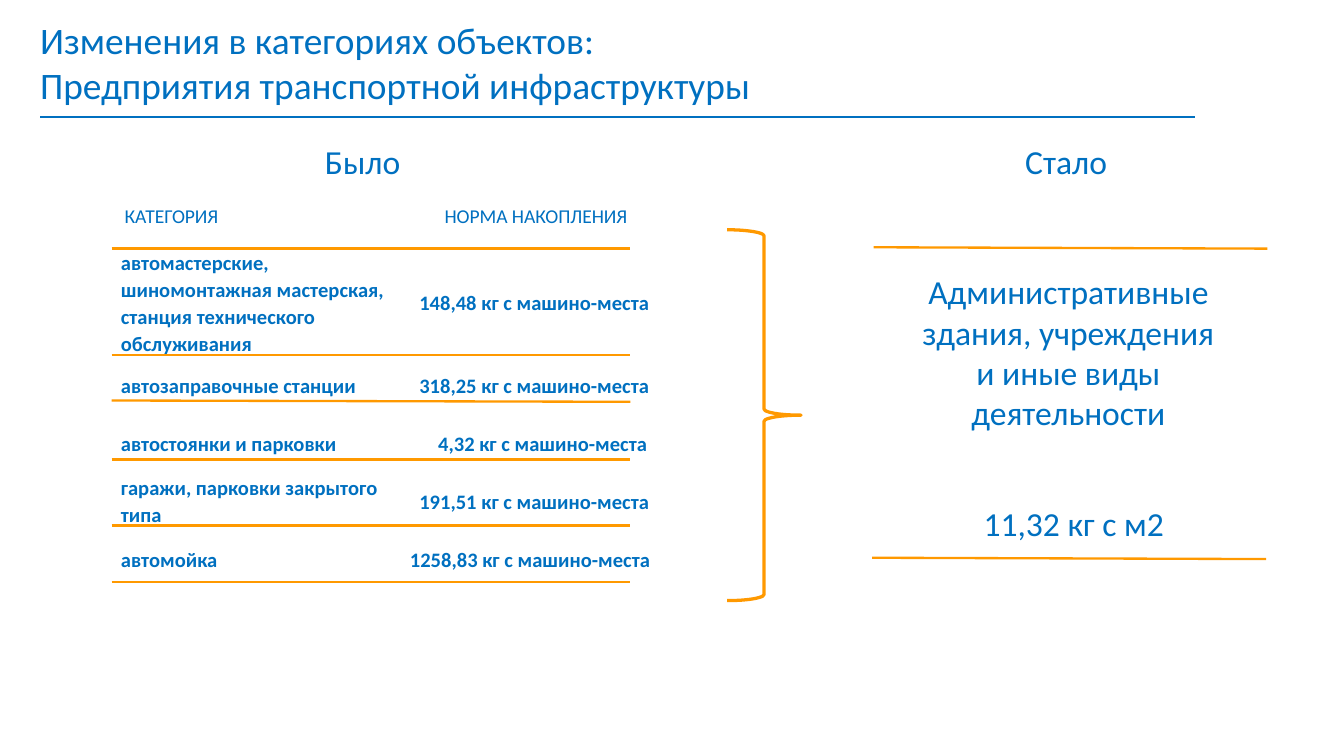
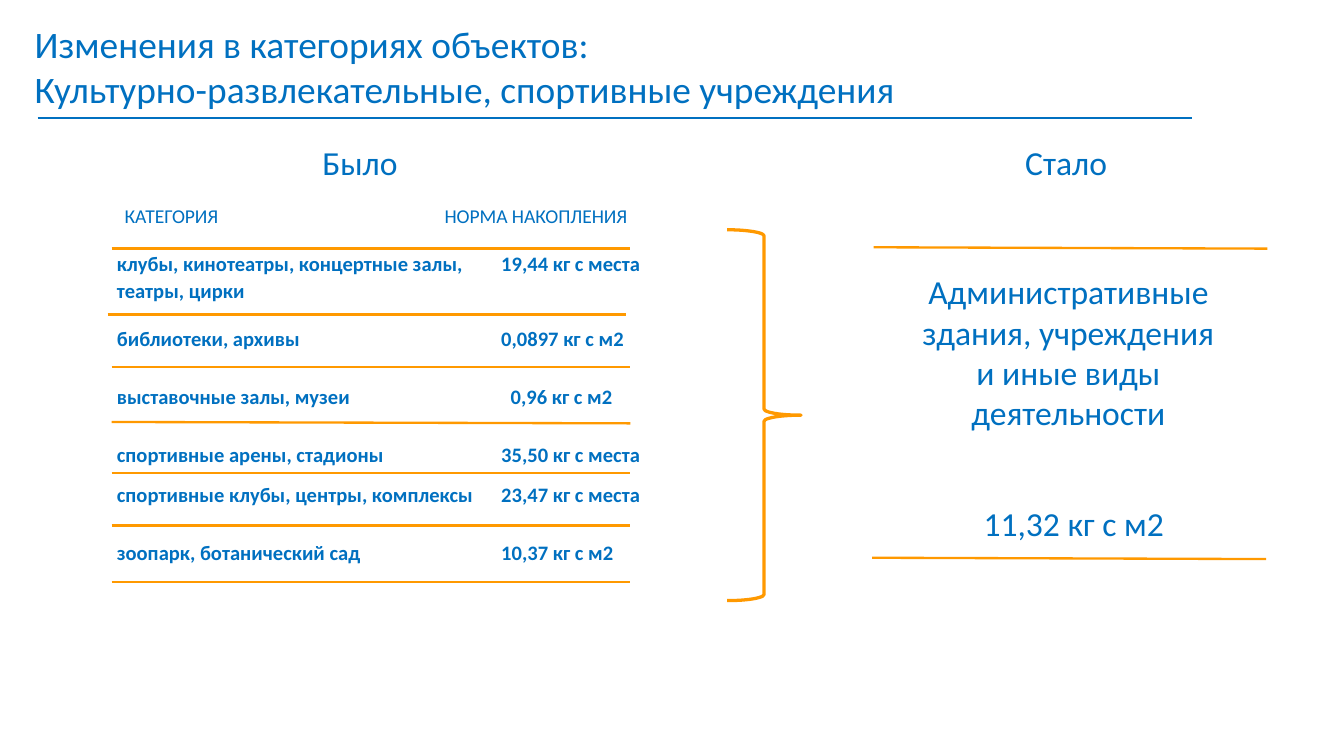
from lxml.etree import SubElement
from pptx import Presentation
from pptx.dml.color import RGBColor
from pptx.enum.shapes import MSO_CONNECTOR, MSO_SHAPE
from pptx.enum.text import MSO_ANCHOR, MSO_AUTO_SIZE, PP_ALIGN
from pptx.oxml.ns import qn
from pptx.util import Inches, Pt

SLIDE_WIDTH = 10
SLIDE_HEIGHT = SLIDE_WIDTH * 9 / 16
COLORS = {"text": "0070C0", "accent": "FF9900", "border": "FFFFFF"}
FONT = "Calibri"
TITLE_LEAD = "Изменения в категориях объектов:"
NEW_CATEGORY = "Административные здания, учреждения и иные виды деятельности"
NEW_NORM = "11,32 кг с м2"
RULE_LEFT, RULE_RIGHT = 0.83, 4.69
SHARED_RULES = [
    (RULE_LEFT, 1.85, RULE_RIGHT, 1.85),
    (RULE_LEFT, 3.91, RULE_RIGHT, 3.91),
    (RULE_LEFT, 4.33, RULE_RIGHT, 4.33),
    (6.5, 1.84, 9.43, 1.85),
    (6.49, 4.15, 9.42, 4.16),
]

TOPICS = [
    {
        "title": "Предприятия транспортной инфраструктуры",
        "title_box": (0.2, 0.08, 8.59, 0.77),
        "title_rule": (0.3, 0.87, 8.89, 0.87),
        "before_box": (2.32, 1, 0.87, 0.4),
        "after_box": (7.53, 1, 0.87, 0.4),
        "norms_box": (0.83, 1.85, 4.3, 2.49),
        "columns": (2.15, 2.15),
        "anchor": MSO_ANCHOR.MIDDLE,
        "space_after": 8,
        "norms": [
            ("автомастерские, шиномонтажная мастерская, станция технического обслуживания",
             "148,48 кг с машино-места", 0.64, 0.07),
            ("автозаправочные станции", "318,25 кг с машино-места", 0.43, 0.07),
            ("автостоянки и парковки", "4,32 кг с машино-места", 0.43, 0.21),
            ("гаражи, парковки закрытого типа", "191,51 кг с машино-места", 0.43, 0.07),
            ("автомойка", "1258,83 кг с машино-места", 0.43, 0),
        ],
        "rules": [
            (RULE_LEFT, 2.64, RULE_RIGHT, 2.64),
            (RULE_LEFT, 2.98, RULE_RIGHT, 2.99),
            (RULE_LEFT, 3.42, RULE_RIGHT, 3.42),
        ],
    },
    {
        "title": "Культурно-развлекательные, спортивные учреждения",
        "title_box": (0.16, 0.11, 8.63, 0.77),
        "title_rule": (0.28, 0.88, 8.87, 0.88),
        "before_box": (2.3, 1.01, 0.87, 0.4),
        "after_box": (7.53, 1.01, 0.87, 0.4),
        "norms_box": (0.8, 1.86, 4.51, 2.56),
        "columns": (2.86, 1.65),
        "anchor": MSO_ANCHOR.TOP,
        "space_after": 0,
        "norms": [
            ("клубы, кинотеатры, концертные залы, театры, цирки", "19,44 кг с места", 0.56, 0),
            ("библиотеки, архивы", "0,0897 кг с м2", 0.43, 0),
            ("выставочные залы, музеи", "0,96 кг с м2", 0.43, 0.07),
            ("спортивные арены, стадионы", "35,50 кг с места", 0.3, 0),
            ("спортивные клубы, центры, комплексы", "23,47 кг с места", 0.43, 0),
            ("зоопарк, ботанический сад", "10,37 кг с м2", 0.43, 0),
        ],
        "rules": [
            (0.8, 2.34, 4.66, 2.34),
            (RULE_LEFT, 2.73, RULE_RIGHT, 2.73),
            (RULE_LEFT, 3.14, RULE_RIGHT, 3.15),
            (RULE_LEFT, 3.52, RULE_RIGHT, 3.52),
        ],
    },
]


def inches(values):
    return [Inches(value) for value in values]


def color(name):
    return RGBColor.from_string(COLORS[name])


def add_run(paragraph, text, size, bold=False):
    run = paragraph.add_run()
    run.text = text
    run.font.name = FONT
    run.font.size = Pt(size)
    run.font.bold = bold
    run.font.color.rgb = color("text")


def add_text(slide, box, lines, size, align=PP_ALIGN.LEFT):
    frame = slide.shapes.add_textbox(*inches(box)).text_frame
    frame.word_wrap = True
    frame.auto_size = MSO_AUTO_SIZE.SHAPE_TO_FIT_TEXT
    for index, line in enumerate(lines):
        paragraph = frame.add_paragraph() if index else frame.paragraphs[0]
        paragraph.alignment = align
        add_run(paragraph, line, size)


def add_rule(slide, ends, name):
    rule = slide.shapes.add_connector(MSO_CONNECTOR.STRAIGHT, *inches(ends))
    rule.line.color.rgb = color(name)
    rule.line.width = Pt(1.25)
    SubElement(rule._element.spPr, qn("a:effectLst"))


def add_borders(cell, bottom_width):
    properties = cell._tc.get_or_add_tcPr()
    for side, width in (("L", 1), ("R", 1), ("T", 1), ("B", bottom_width)):
        border = SubElement(properties, qn(f"a:ln{side}"), w=str(Pt(width)))
        fill = SubElement(border, qn("a:solidFill"))
        SubElement(fill, qn("a:srgbClr"), val=COLORS["border"])


def add_norms(slide, topic):
    norms, columns = topic["norms"], topic["columns"]
    box = inches(topic["norms_box"])
    holder = slide.shapes.add_table(len(norms), len(columns), *box)
    table = holder.table
    table.first_row = False
    table.horz_banding = False
    for column, width in zip(table.columns, columns):
        column.width = Inches(width)
    for index, (category, norm, height, indent) in enumerate(norms):
        table.rows[index].height = Inches(height)
        for column, (text, inset) in enumerate(((category, 0), (norm, indent))):
            cell = table.cell(index, column)
            cell.margin_left = Inches(0.07 + inset)
            cell.margin_right = Inches(0.07)
            cell.margin_top = cell.margin_bottom = 0
            cell.vertical_anchor = topic["anchor"]
            add_borders(cell, 1 if index else 3)
            cell.fill.background()
            paragraph = cell.text_frame.paragraphs[0]
            paragraph.line_spacing = 1.07
            paragraph.space_after = Pt(topic["space_after"])
            add_run(paragraph, text, 11, bold=True)
    holder.height = box[3]


def add_brace(slide):
    brace = slide.shapes.add_shape(
        MSO_SHAPE.RIGHT_BRACE, *inches((5.41, 1.71, 0.55, 2.76)))
    brace.shadow.inherit = False
    brace.fill.background()
    brace.line.color.rgb = color("accent")
    brace.line.width = Pt(1.75)


def add_topic(deck, topic):
    slide = deck.slides.add_slide(deck.slide_layouts[6])
    add_norms(slide, topic)
    add_text(slide, topic["title_box"], [TITLE_LEAD, topic["title"]], 20)
    add_text(slide, topic["before_box"], ["Было"], 18)
    add_text(slide, topic["after_box"], ["Стало"], 18)
    add_brace(slide)
    add_text(slide, (0.83, 1.47, 1.04, 0.29), ["КАТЕГОРИЯ"], 10.5)
    add_text(slide, (3.21, 1.47, 1.63, 0.28), ["НОРМА НАКОПЛЕНИЯ"], 10.5)
    add_text(slide, (6.73, 1.97, 2.44, 1.31), [NEW_CATEGORY], 18, PP_ALIGN.CENTER)
    add_text(slide, (7.22, 3.69, 1.78, 0.4), [NEW_NORM], 18)
    for ends in SHARED_RULES + topic["rules"]:
        add_rule(slide, ends, "accent")
    add_rule(slide, topic["title_rule"], "text")


def main():
    deck = Presentation()
    deck.slide_width, deck.slide_height = inches((SLIDE_WIDTH, SLIDE_HEIGHT))
    for topic in TOPICS:
        add_topic(deck, topic)
    deck.save("out.pptx")


if __name__ == "__main__":
    main()
